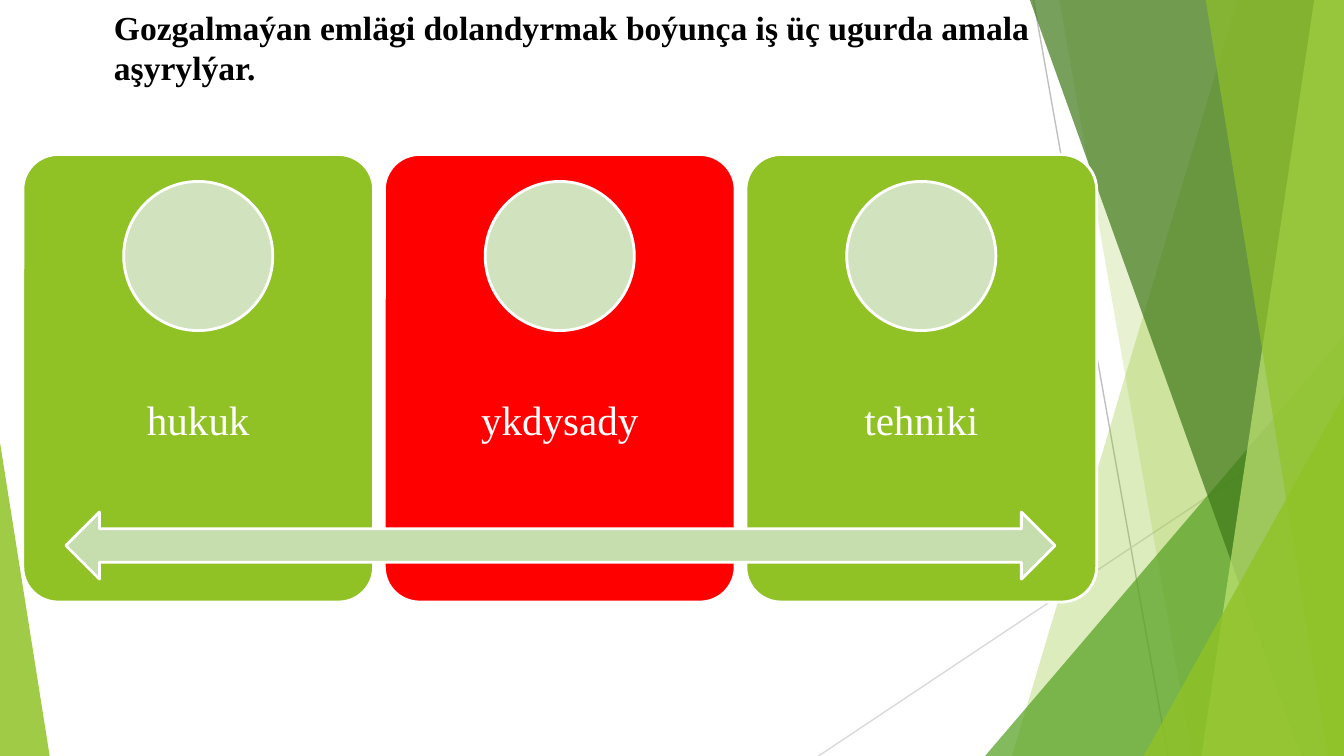
from lxml.etree import SubElement
from pptx import Presentation
from pptx.dml.color import RGBColor
from pptx.enum.shapes import MSO_CONNECTOR, MSO_SHAPE
from pptx.enum.text import MSO_ANCHOR, PP_ALIGN
from pptx.oxml.ns import qn
from pptx.util import Inches, Pt

WIDTH = 10
HEIGHT = WIDTH * 9 / 16
COLORS = {
    "lime": "90C226", "green": "54A021", "forest": "3F7819", "pale": "C0E474",
    "red": "FF0000", "circle": "D1E3BE", "arrow": "C6DDAD",
    "white": "FFFFFF", "black": "000000", "gray": "BFBFBF", "silver": "D9D9D9",
}


class SlidePainter:
    def __init__(self, page, font="Times New Roman"):
        self.page = page
        self.font = font

    def color(self, name):
        return RGBColor.from_string(COLORS[name])

    def paint(self, shape, fill, opacity=100, outline=None):
        shape.shadow.inherit = False
        shape.fill.solid()
        shape.fill.fore_color.rgb = self.color(fill)
        if opacity < 100:
            color_node = shape.fill._xPr.find(f".//{qn('a:srgbClr')}")
            SubElement(color_node, qn("a:alpha"), val=str(opacity * 1000))
        if outline:
            shape.line.color.rgb = self.color(outline)
            shape.line.width = Pt(1.5)
        else:
            shape.line.fill.background()

    def line(self, start, end, color):
        connector = self.page.shapes.add_connector(
            MSO_CONNECTOR.STRAIGHT, *map(Inches, start + end))
        connector.line.color.rgb = self.color(color)
        connector.line.width = Pt(0.75)
        SubElement(connector._element.spPr, qn("a:effectLst"))

    def facet(self, top_x, bottom_x, fill, opacity):
        """Fill the area from a slanted left edge to the right side of the slide."""
        top = -0.01
        corners = [(WIDTH, top), (WIDTH, HEIGHT), (bottom_x, HEIGHT)]
        builder = self.page.shapes.build_freeform(Inches(top_x), Inches(top))
        builder.add_line_segments([(Inches(x), Inches(y)) for x, y in corners])
        self.paint(builder.convert_to_shape(), fill, opacity)

    def shape(self, kind, bounds, fill, opacity=100, outline=None, adjustment=None):
        shape = self.page.shapes.add_shape(kind, *map(Inches, bounds))
        if adjustment is not None:
            shape.adjustments[0] = adjustment
        self.paint(shape, fill, opacity, outline)

    def text(self, text, bounds, size, color, bold=False, centered=False, inset=None):
        box = self.page.shapes.add_textbox(*map(Inches, bounds))
        frame = box.text_frame
        frame.word_wrap = True
        frame.text = text
        paragraph = frame.paragraphs[0]
        if inset is not None:
            frame.margin_left = frame.margin_right = Inches(inset)
            frame.margin_top = frame.margin_bottom = Inches(inset)
        if centered:
            frame.vertical_anchor = MSO_ANCHOR.MIDDLE
            paragraph.alignment = PP_ALIGN.CENTER
            paragraph.line_spacing = 0.9
        font = paragraph.runs[0].font
        font.name, font.size, font.bold = self.font, Pt(size), bold
        font.color.rgb = self.color(color)

    def corner(self, left, top, width, fill, opacity, apex):
        bounds = (left, top, width, HEIGHT - top)
        self.shape(MSO_SHAPE.ISOSCELES_TRIANGLE, bounds, fill, opacity, adjustment=apex)

    def card(self, left, label, fill):
        top, width, height, diameter = 1.15, 2.61, 3.33, 1.11
        self.shape(MSO_SHAPE.ROUNDED_RECTANGLE, (left, top, width, height), fill,
                   outline="white", adjustment=0.1)
        self.text(label, (left, 2.48, width, 1.33), 22, "white", centered=True, inset=0.17)
        self.shape(MSO_SHAPE.OVAL,
                   (left + (width - diameter) / 2, top + 0.2, diameter, diameter),
                   "circle", outline="white")


def draw_backdrop(painter):
    painter.line((7.69, 0), (8.69, HEIGHT), "gray")
    painter.line((WIDTH, 3.02), (6.09, HEIGHT), "silver")
    painter.facet(9.21, 7.53, "lime", 30)
    painter.facet(7.88, 8.87, "lime", 20)
    painter.corner(7.33, 2.5, 2.67, "green", 72, apex=1)
    painter.facet(7.66, 9.68, "forest", 70)
    painter.facet(9.78, 8.94, "pale", 70)
    painter.facet(8.97, 9.88, "lime", 65)
    painter.corner(8.51, 2.94, 1.49, "lime", 80, apex=1)
    painter.corner(0, 3.29, 0.37, "lime", 85, apex=0)


def main():
    deck = Presentation()
    deck.slide_width, deck.slide_height = Inches(WIDTH), Inches(HEIGHT)
    painter = SlidePainter(deck.slides.add_slide(deck.slide_layouts[6]))
    draw_backdrop(painter)
    painter.text("Gozgalmaýan emlägi dolandyrmak boýunça iş üç ugurda amala aşyrylýar.",
                 (0.75, 0, 7.67, 1.01), 18, "black", bold=True)
    cards = [("hukuk", "lime"), ("ykdysady", "red"), ("tehniki", "lime")]
    for index, (label, fill) in enumerate(cards):
        painter.card(0.17 + index * 2.69, label, fill)
    painter.shape(MSO_SHAPE.LEFT_RIGHT_ARROW, (0.49, 3.81, 7.36, 0.5), "arrow",
                  outline="white")
    deck.save("out.pptx")


if __name__ == "__main__":
    main()
